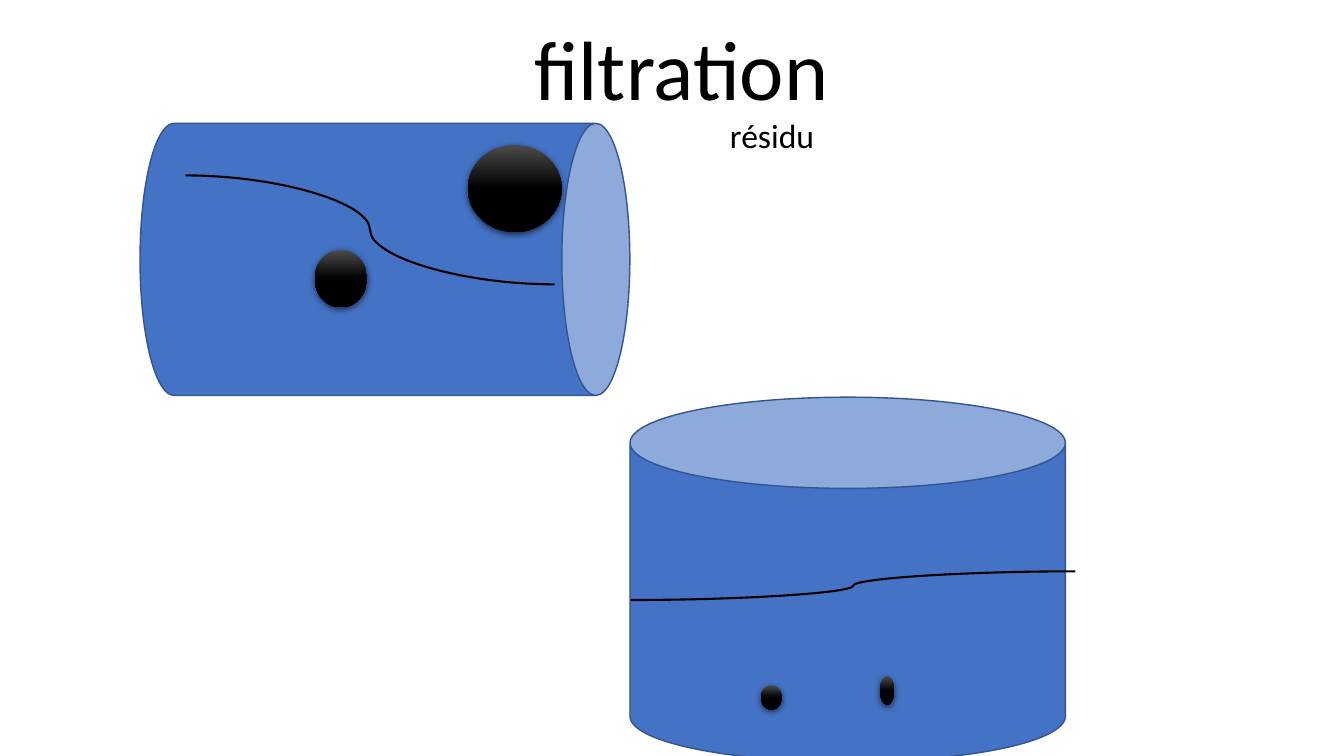
from lxml import etree
from pptx import Presentation
from pptx.dml.color import RGBColor
from pptx.enum.shapes import MSO_CONNECTOR, MSO_SHAPE
from pptx.enum.text import MSO_ANCHOR, PP_ALIGN
from pptx.oxml.ns import qn
from pptx.util import Pt

CAN, BALL = MSO_SHAPE.CAN, MSO_SHAPE.OVAL
CURVE = MSO_CONNECTOR.CURVE
TOP, BOTTOM = MSO_ANCHOR.TOP, MSO_ANCHOR.BOTTOM
CENTER = PP_ALIGN.CENTER
COLORS = {"ink": "000000", "shine": "4B4B4B", "blue": "4472C4", "edge": "325491"}


def color(name):
    return RGBColor.from_string(COLORS[name])


def pts(*nums):
    return [Pt(num) for num in nums]


def add_text(slide, box, text, size, anchor):
    frame = slide.shapes.add_textbox(*pts(*box)).text_frame
    frame.word_wrap = True
    frame.vertical_anchor = anchor
    para = frame.paragraphs[0]
    para.alignment = CENTER
    para.line_spacing = 0.9
    run = para.add_run()
    run.text = text
    run.font.name = "Calibri"
    run.font.size = Pt(size)
    run.font.color.rgb = color("ink")


def add_can(slide, box, turn=0):
    can = slide.shapes.add_shape(CAN, *pts(*box))
    can.rotation = turn
    can.shadow.inherit = False
    can.fill.solid()
    can.fill.fore_color.rgb = color("blue")
    can.line.color.rgb = color("edge")
    can.line.width = Pt(1)


def add_ball(slide, box):
    """Draw a grain with a shiny top and a soft shadow below."""
    ball = slide.shapes.add_shape(BALL, *pts(*box))
    ball.fill.gradient()
    ball.fill.gradient_angle = 270
    for stop, spot, name in zip(ball.fill.gradient_stops, (0, 0.5), ("shine", "ink")):
        stop.position = spot
        stop.color.rgb = color(name)
    ball.line.fill.background()
    ball.shadow.inherit = False
    effects = ball._element.spPr.find(qn("a:effectLst"))
    shade = etree.SubElement(
        effects, qn("a:outerShdw"), blurRad=str(Pt(4.5)), dist=str(Pt(1.5)),
        dir="5400000", algn="ctr", rotWithShape="0")
    tint = etree.SubElement(shade, qn("a:srgbClr"), val=COLORS["ink"])
    etree.SubElement(tint, qn("a:alpha"), val="63000")


def add_wave(slide, start, end):
    wave = slide.shapes.add_connector(CURVE, *pts(*start, *end))
    wave.line.color.rgb = color("ink")
    wave.line.width = Pt(1.5)
    etree.SubElement(wave._element.spPr, qn("a:effectLst"))


def add_heads(slide, left, top):
    add_text(slide, (left, top, 613.4, 88.6), "filtration", 60, BOTTOM)
    add_text(slide, (left + 11.5, top + 82.1, 720, 130.3), "résidu", 24, TOP)


def add_filter(slide, left, top, width, height):
    """Draw the lying can: an upright one turned about its centre."""
    shift = (width - height) / 2
    add_can(slide, (left + shift, top - shift, height, width), 90)
    add_wave(slide, (left + 32.6, top + 37.2), (left + 296.1, top + 115))
    add_ball(slide, (left + 234.2, top + 15.6, 67, 62))
    add_ball(slide, (left + 124.7, top + 90.5, 37.5, 41))


def add_vessel(slide, left, top, width, height):
    add_can(slide, (left, top, width, height))
    add_wave(slide, (left + 0.7, top + 144.9), (left + 318.2, top + 124.4))
    add_ball(slide, (left + 93.6, top + 205.9, 14.8, 17.3))
    add_ball(slide, (left + 178.6, top + 199.4, 10.1, 20.2))


def main():
    deck = Presentation()
    deck.slide_width, deck.slide_height = pts(960, 540)
    slide = deck.slides.add_slide(deck.slide_layouts[6])
    add_heads(slide, 180, 0)
    add_filter(slide, 100, 88.1, 349.9, 194.4)
    add_vessel(slide, 450, 283.7, 311, 260.6)
    deck.save("out.pptx")


if __name__ == "__main__":
    main()
